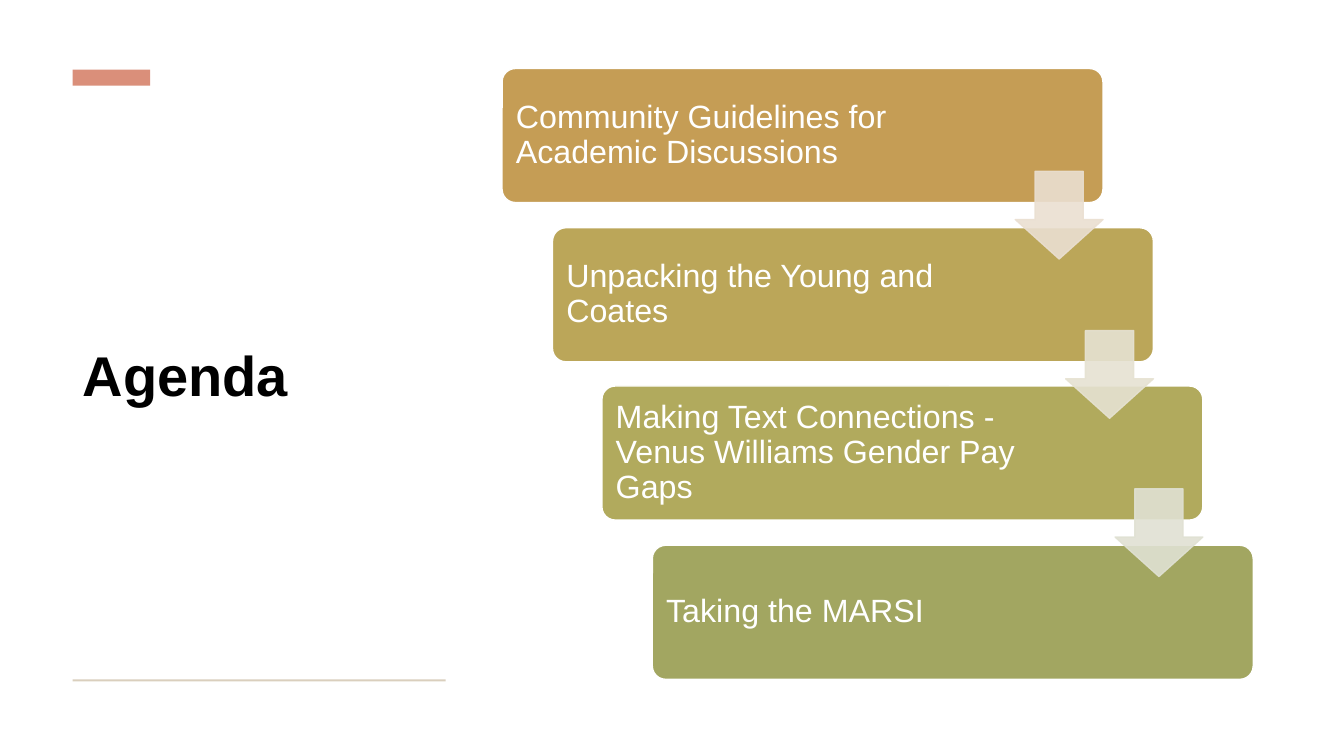
from lxml import etree
from pptx import Presentation
from pptx import util as u
from pptx.dml.color import RGBColor
from pptx.enum import shapes, text
from pptx.oxml.ns import qn

EMU_PER_PX = 9144  # 100 px to the inch

# Agenda steps: wording, box colour, colour of the arrow to the next step
STEPS = [
    ("Community Guidelines for Academic Discussions", "C59D55", "EADFD1"),
    ("Unpacking the Young and Coates", "BBA659", "E6E2D2"),
    ("Making Text Connections - Venus Williams Gender Pay Gaps", "B1AA5D", "E0E1D3"),
    ("Taking the MARSI", "A2A661", None),
]


def px(length):
    return u.Emu(length * EMU_PER_PX)


def rgb(value):
    return RGBColor.from_string(value)


class AgendaSlide:
    font = "Arial"
    ink = "000000"
    white = "FFFFFF"

    def __init__(self, deck):
        self.page = deck.slides.add_slide(deck.slide_layouts[5])

    def add_words(self, frame, words, size, colour, bold=False):
        frame.word_wrap = True
        frame.vertical_anchor = text.MSO_ANCHOR.MIDDLE
        para = frame.paragraphs[0]
        para.alignment = text.PP_ALIGN.LEFT
        para.line_spacing = 0.9
        span = para.add_run()
        span.text = words
        span.font.name = self.font
        span.font.size = u.Pt(size)
        span.font.bold = bold
        span.font.color.rgb = rgb(colour)

    def title(self, words, left, top, width, height):
        box = self.page.shapes.title
        box.left, box.top, box.width, box.height = map(px, (left, top, width, height))
        self.add_words(box.text_frame, words, 40, self.ink, bold=True)

    def shape(self, kind, left, top, width, height, fill, line=None):
        box = self.page.shapes.add_shape(kind, *map(px, (left, top, width, height)))
        box.shadow.inherit = False
        box.fill.solid()
        box.fill.fore_color.rgb = rgb(fill)
        if line:
            box.line.color.rgb = rgb(line)
            box.line.width = u.Pt(1)
        else:
            box.line.fill.background()
        return box

    def bar(self, left, top, width, height, fill):
        self.shape(shapes.MSO_SHAPE.RECTANGLE, left, top, width, height, fill)

    def step(self, words, left, top, fill):
        box = self.shape(shapes.MSO_SHAPE.ROUNDED_RECTANGLE,
                         left, top, 596, 133, fill, self.white)
        box.adjustments[0] = 0.1
        frame = box.text_frame
        frame.margin_left = frame.margin_top = frame.margin_bottom = px(10)
        frame.margin_right = px(146)  # keeps the words clear of the arrows
        self.add_words(frame, words, 23, self.white)

    def arrow(self, left, top, fill):
        box = self.shape(shapes.MSO_SHAPE.DOWN_ARROW, left, top, 87, 87, fill, fill)
        box.adjustments[0] = 0.55
        box.adjustments[1] = 0.45
        # Fill and outline are both 90% opaque
        for colour in box.element.spPr.iter(qn("a:srgbClr")):
            etree.SubElement(colour, qn("a:alpha"), val="90000")


def main():
    deck = Presentation()
    deck.slide_width, deck.slide_height = u.Inches(13.33), u.Inches(7.5)
    slide = AgendaSlide(deck)

    # Title column with its accent bar and rule
    slide.title("Agenda", 72, 105, 370, 541)
    slide.bar(72, 69, 77, 16, "DA8F7A")
    slide.bar(72, 674, 370, 2, "DACFBD")

    # Staircase of steps, evenly spaced from the first to the last
    gaps = len(STEPS) - 1
    corners = [(498 + round(149 * i / gaps), 68 + round(473 * i / gaps))
               for i in range(len(STEPS))]
    for (words, fill, _), (left, top) in zip(STEPS, corners):
        slide.step(words, left, top, fill)

    # Arrows lie over the boxes they join
    for (_, _, fill), (left, top) in zip(STEPS[:-1], corners):
        slide.arrow(left + 509, top + 102, fill)

    deck.save("out.pptx")


if __name__ == "__main__":
    main()
